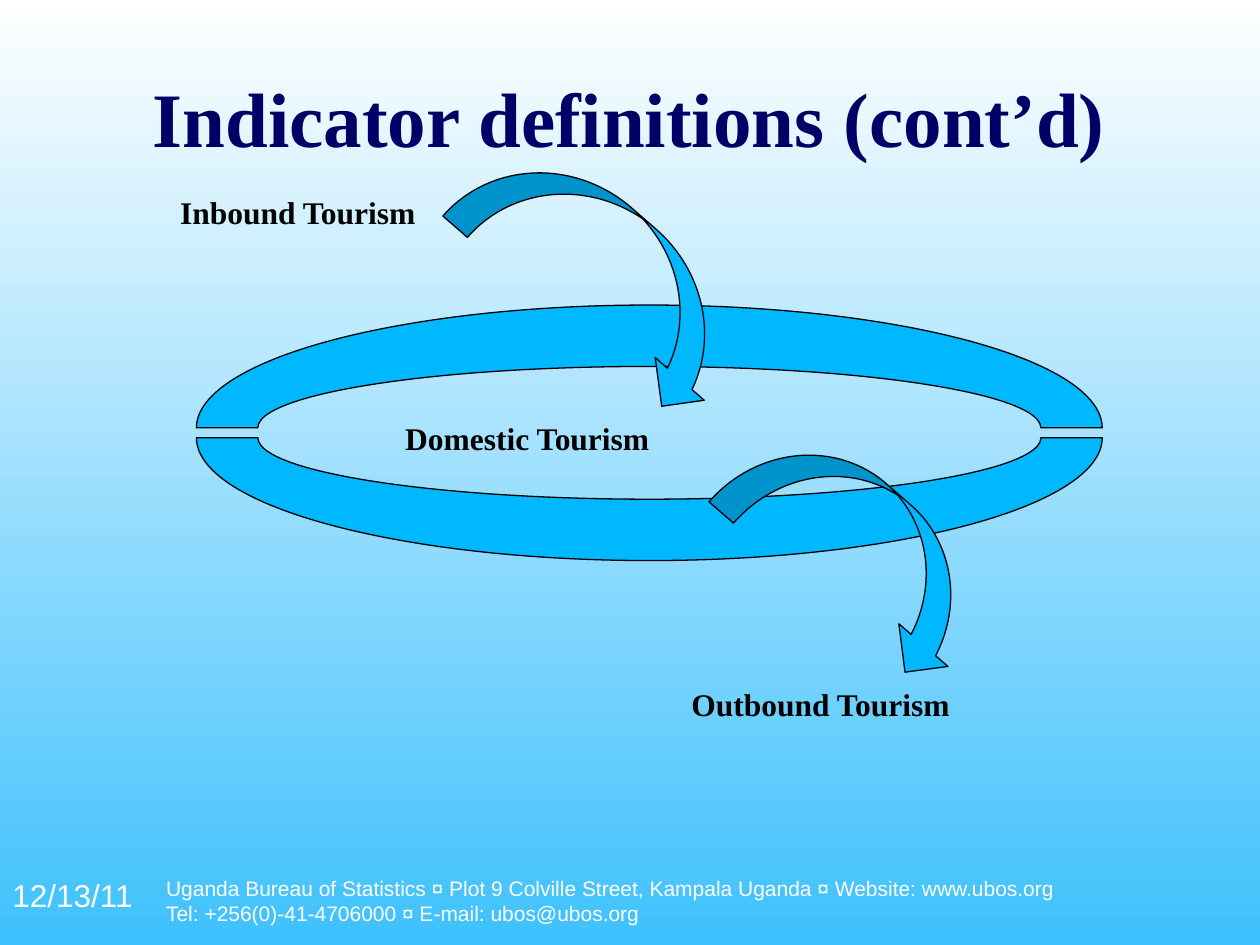
from pptx import Presentation
from pptx.dml.color import RGBColor
from pptx.enum.shapes import MSO_SHAPE
from pptx.enum.text import MSO_ANCHOR, MSO_AUTO_SIZE, PP_ALIGN
from pptx.util import Cm, Pt

BLOCK_ARC = MSO_SHAPE.BLOCK_ARC
CURVED_ARROW = MSO_SHAPE.CURVED_DOWN_ARROW
MIDDLE, TOP = MSO_ANCHOR.MIDDLE, MSO_ANCHOR.TOP
FIXED, GROW = MSO_AUTO_SIZE.NONE, MSO_AUTO_SIZE.SHAPE_TO_FIT_TEXT
CENTER, LEFT = PP_ALIGN.CENTER, PP_ALIGN.LEFT

COLORS = {
    "sky_top": "FFFFFF",
    "sky_bottom": "3EC1FC",
    "title": "000066",
    "ink": "000000",
    "footer": "FFFFFF",
    "flow": "00B8FF",
}
SERIF, SANS = "Times New Roman", "Arial"
TITLE_FONT = {"name": SERIF, "size": Pt(44), "bold": True}
LABEL_FONT = {"name": SERIF, "size": Pt(18), "bold": True}
DATE_FONT = {"name": SANS, "size": Pt(18), "bold": False}
ADDRESS_FONT = {"name": SANS, "size": Pt(12), "bold": False}


class TourismSlide:
    def __init__(self, presentation):
        self.slide = presentation.slides.add_slide(presentation.slide_layouts[5])

    def color(self, key):
        return RGBColor.from_string(COLORS[key])

    def background(self, top, bottom):
        fill = self.slide.background.fill
        fill.gradient()
        fill.gradient_angle = 270
        for stop, key, position in zip(fill.gradient_stops, (top, bottom), (0, 1)):
            stop.color.rgb = self.color(key)
            stop.position = position

    def set_text(self, frame, lines, font_format, color, frame_format, align=LEFT):
        for attribute, value in frame_format.items():
            setattr(frame, attribute, value)
        frame.text = "\n".join(lines)
        for paragraph in frame.paragraphs:
            paragraph.alignment = align
            for attribute, value in font_format.items():
                setattr(paragraph.font, attribute, value)
            paragraph.font.color.rgb = self.color(color)

    def title(self, heading, left, top, width, height):
        title = self.slide.shapes.title
        place = {"left": left, "top": top, "width": width, "height": height}
        for attribute, value in place.items():
            setattr(title, attribute, Cm(value))
        frame_format = {"word_wrap": True, "auto_size": FIXED, "vertical_anchor": MIDDLE}
        self.set_text(title.text_frame, [heading], TITLE_FONT, "title", frame_format, CENTER)

    def text(self, lines, box, font_format, color, auto_size=FIXED):
        frame = self.slide.shapes.add_textbox(*map(Cm, box)).text_frame
        frame_format = {"word_wrap": True, "auto_size": auto_size, "vertical_anchor": TOP}
        self.set_text(frame, lines, font_format, color, frame_format)

    def label(self, wording, left, top, width):
        self.text([wording], (left, top, width, 1.02), LABEL_FONT, "ink", GROW)

    def flow(self, preset, box, rotation=0):
        flow = self.slide.shapes.add_shape(preset, *map(Cm, box))
        flow.rotation = rotation
        flow.shadow.inherit = False
        flow.fill.solid()
        flow.fill.fore_color.rgb = self.color("flow")
        flow.line.color.rgb = self.color("ink")
        flow.line.width = Pt(0.75)


def main():
    presentation = Presentation()
    presentation.slide_width, presentation.slide_height = Cm(25.4), Cm(19.05)

    page = TourismSlide(presentation)
    page.background("sky_top", "sky_bottom")
    page.title("Indicator definitions (cont’d)", 1.27, 0.36, 22.83, 3.99)

    page.text(["12/13/11"], (0, 17.53, 3.1, 1.52), DATE_FONT, "footer")
    address = [
        "Uganda Bureau of Statistics ¤ Plot 9 Colville Street, Kampala Uganda ¤ Website: www.ubos.org",
        "Tel: +256(0)-41-4706000 ¤ E-mail: ubos@ubos.org",
    ]
    page.text(address, (3.1, 17.53, 19.79, 1.52), ADDRESS_FONT, "footer")

    for arc_top, rotation in ((6.15, 0), (6.35, 180)):
        page.flow(BLOCK_ARC, (3.96, arc_top, 18.26, 4.95), rotation)
    page.label("Domestic Tourism", 7.92, 8.33, 5.56)

    for left, top, width in ((8.99, 4.19, 6.5), (14.43, 9.75, 5.89)):
        page.flow(CURVED_ARROW, (left, top, width, 2.62), 41)
    page.label("Inbound Tourism", 3.38, 3.76, 5.56)
    page.label("Outbound Tourism", 13.69, 13.69, 6.55)

    presentation.save("out.pptx")


if __name__ == "__main__":
    main()
